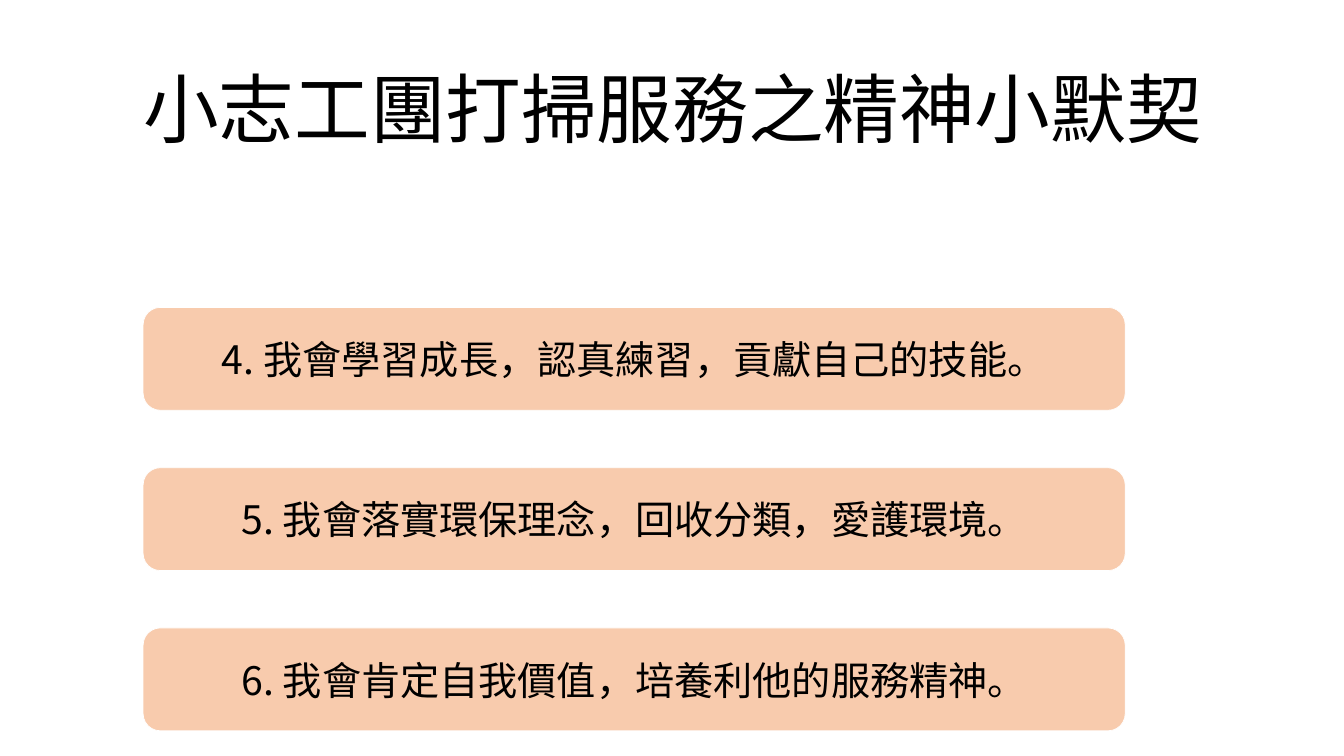
from lxml.etree import SubElement
from pptx import Presentation
from pptx.dml.color import RGBColor as RGB
from pptx.enum.shapes import MSO_SHAPE as SHAPE
from pptx.enum.text import MSO_ANCHOR as ANCHOR, PP_ALIGN as ALIGN
from pptx.oxml.ns import qn
from pptx.util import Inches, Pt

COLORS = {"text": "000000", "card": "F8CBAD", "edge": "FFFFFF"}
FONT = "Noto Sans CJK SC"
WIDTH, HEIGHT = 13.33, 7.5
CARD_LEFT, CARD_TOP, CARD_WIDTH, CARD_HEIGHT = 1.42, 3.05, 9.74, 1.02
ROW_STEP = 1.59
PROMISES = [
    "4. 我會學習成長，認真練習，貢獻自己的技能。",
    "5. 我會落實環保理念，回收分類，愛護環境。",
    "6. 我會肯定自我價值，培養利他的服務精神。",
]


def color(name):
    return RGB.from_string(COLORS[name])


def place(s, left, top, width, height):
    s.left, s.top = Inches(left), Inches(top)
    s.width, s.height = Inches(width), Inches(height)


def write(s, text, size):
    tf = s.text_frame
    tf.word_wrap = True
    tf.vertical_anchor = ANCHOR.MIDDLE
    p = tf.paragraphs[0]
    p.text = text
    p.alignment = ALIGN.CENTER
    p.font.size = Pt(size)
    p.font.color.rgb = color("text")
    p.font.name = FONT
    SubElement(p._p.pPr.find(qn("a:defRPr")), qn("a:ea"), typeface=FONT)
    return p


def add_title(slide, text):
    s = slide.shapes.title
    place(s, 0.92, 0.4, 11.5, 1.45)
    write(s, text, 54).line_spacing = 0.9


def add_card(slide, row, text):
    s = slide.shapes.add_shape(SHAPE.ROUNDED_RECTANGLE, 0, 0, 0, 0)
    place(s, CARD_LEFT, CARD_TOP + row * ROW_STEP, CARD_WIDTH, CARD_HEIGHT)
    s.shadow.inherit = False
    s.fill.solid()
    s.fill.fore_color.rgb = color("card")
    s.line.color.rgb = color("edge")
    s.line.width = Pt(0.5)
    write(s, text, 28)


def main():
    prs = Presentation()
    prs.slide_width, prs.slide_height = Inches(WIDTH), Inches(HEIGHT)
    slide = prs.slides.add_slide(prs.slide_layouts[5])
    add_title(slide, "小志工團打掃服務之精神小默契")
    for row, text in enumerate(PROMISES):
        add_card(slide, row, text)
    prs.save("out.pptx")


if __name__ == "__main__":
    main()
